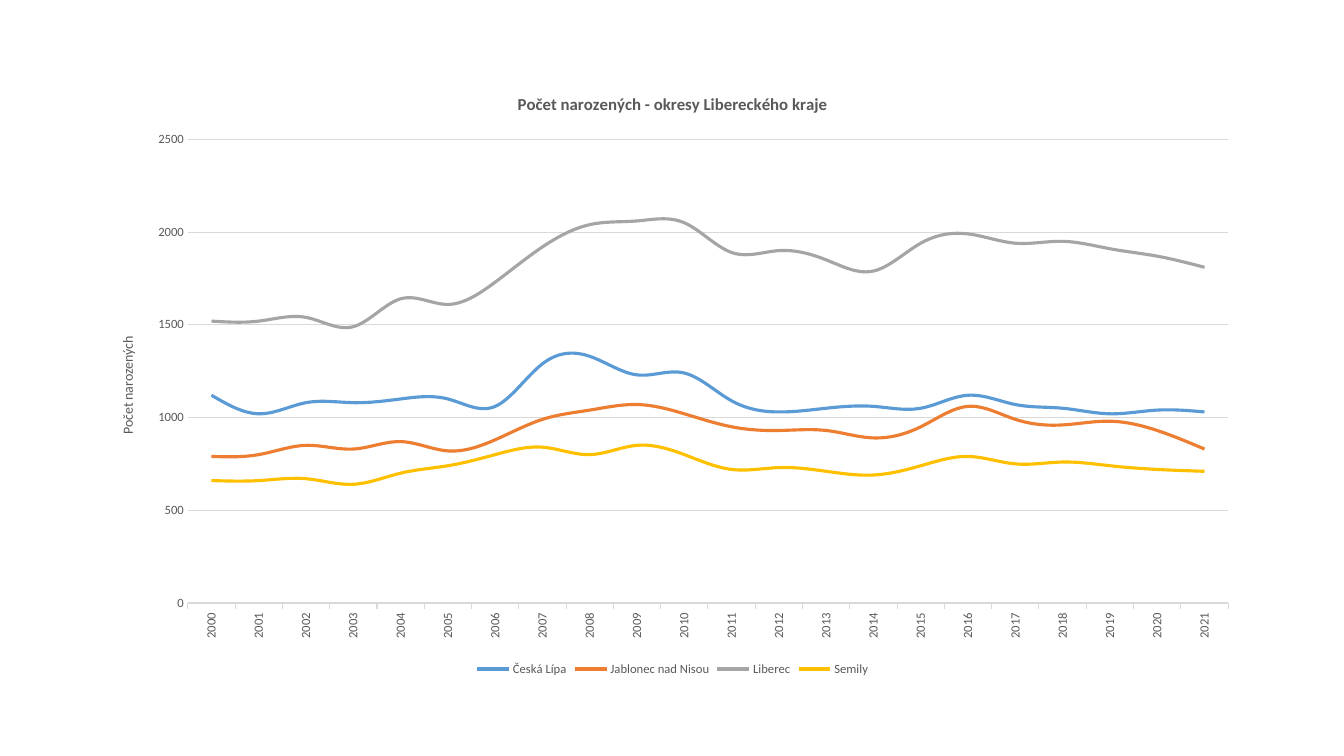
from lxml import etree
from pptx import Presentation
from pptx import util as u
from pptx.chart.data import CategoryChartData
from pptx.dml.color import RGBColor
from pptx.enum import chart as ch
from pptx.oxml import ns

COLORS = {
    "text": "595959",
    "rule": "D9D9D9",
    "Česká Lípa": "5B9BD5",
    "Jablonec nad Nisou": "ED7D31",
    "Liberec": "A5A5A5",
    "Semily": "FFC000",
}

YEARS = [str(year) for year in range(2000, 2022)]

BIRTHS = {
    "Česká Lípa": [
        1120, 1020, 1080, 1080, 1100, 1100, 1060, 1290, 1330, 1230, 1240,
        1090, 1030, 1050, 1060, 1050, 1120, 1070, 1050, 1020, 1040, 1030],
    "Jablonec nad Nisou": [
        790, 800, 850, 830, 870, 820, 880, 990, 1040, 1070, 1020,
        950, 930, 930, 890, 950, 1060, 990, 960, 980, 930, 830],
    "Liberec": [
        1520, 1520, 1540, 1490, 1640, 1610, 1730, 1920, 2040, 2060, 2050,
        1890, 1900, 1850, 1790, 1940, 1990, 1940, 1950, 1910, 1870, 1810],
    "Semily": [
        660, 660, 670, 640, 700, 740, 800, 840, 800, 850, 800,
        720, 730, 710, 690, 740, 790, 750, 760, 740, 720, 710],
}


class ChartSlide:
    """Holds the style and the current slide, with lengths as shares of its size."""

    def __init__(self, deck, font="Calibri"):
        self.deck = deck
        self.font = font
        self.slide = deck.slides.add_slide(deck.slide_layouts[6])

    def style_font(self, font, size, bold=False):
        font.name = self.font
        font.size = u.Pt(size)
        font.bold = bold
        font.color.rgb = RGBColor.from_string(COLORS["text"])

    def style_line(self, line, color, width):
        line.color.rgb = RGBColor.from_string(COLORS[color])
        line.width = u.Pt(width)

    def title(self, owner, wording, size, bold=False):
        owner.text_frame.text = wording
        self.style_font(owner.text_frame.paragraphs[0].font, size, bold)

    def place(self, element, position, **shares):
        for old in element.findall(ns.qn("c:layout")):
            element.remove(old)
        layout = etree.Element(ns.qn("c:layout"))
        manual = etree.SubElement(layout, ns.qn("c:manualLayout"))
        for tag, value in shares.items():
            etree.SubElement(manual, ns.qn("c:" + tag)).set("val", str(value))
        element.insert(position, layout)

    def turn_upright(self, element):
        body = next(element.iter(ns.qn("a:bodyPr")))
        body.set("rot", "-5400000")
        body.set("vert", "horz")

    def line_chart(self, left, top, width, height, heading, categories, series):
        data = CategoryChartData()
        data.categories = categories
        for name, values in series.items():
            data.add_series(name, values)
        wide, high = self.deck.slide_width, self.deck.slide_height
        chart = self.slide.shapes.add_chart(
            ch.XL_CHART_TYPE.LINE, int(left * wide), int(top * high),
            int(width * wide), int(height * high), data).chart
        self.style_font(chart.font, 10)
        self.title(chart.chart_title, heading, 12, bold=True)
        chart.has_legend = True
        chart.legend.position = ch.XL_LEGEND_POSITION.BOTTOM
        chart.legend.include_in_layout = False
        self.style_font(chart.legend.font, 9)
        plot = chart.plots[0]
        plot.vary_by_categories = False
        for line in plot.series:
            line.smooth = True
            line.marker.style = ch.XL_MARKER_STYLE.NONE
            self.style_line(line.format.line, line.name, 2.25)
        return chart

    def category_axis(self, axis):
        axis.has_major_gridlines = False
        axis.major_tick_mark = ch.XL_TICK_MARK.OUTSIDE
        axis.minor_tick_mark = ch.XL_TICK_MARK.NONE
        self.style_font(axis.tick_labels.font, 9)
        self.style_line(axis.format.line, "rule", 0.75)
        self.turn_upright(axis._element)

    def value_axis(self, axis, wording, top, step):
        axis.minimum_scale = 0
        axis.maximum_scale = top
        axis.major_unit = step
        axis.major_tick_mark = ch.XL_TICK_MARK.NONE
        axis.minor_tick_mark = ch.XL_TICK_MARK.NONE
        axis.format.line.fill.background()
        axis.has_major_gridlines = True
        self.style_line(axis.major_gridlines.format.line, "rule", 0.75)
        self.style_font(axis.tick_labels.font, 9)
        self.title(axis.axis_title, wording, 10)
        label = axis.axis_title._element
        self.turn_upright(label)
        self.place(label, 1, xMode="edge", yMode="edge", x=0.02, y=0.43)


def main():
    deck = Presentation()
    deck.slide_width = u.Inches(13.33)
    deck.slide_height = u.Inches(7.5)
    page = ChartSlide(deck)
    chart = page.line_chart(0.069, 0.095, 0.863, 0.805,
                            "Počet narozených - okresy Libereckého kraje",
                            YEARS, BIRTHS)
    page.category_axis(chart.category_axis)
    page.value_axis(chart.value_axis, "Počet narozených", top=2500, step=500)
    plot_area = next(chart._chartSpace.iter(ns.qn("c:plotArea")))
    page.place(plot_area, 0, layoutTarget="inner", xMode="edge", yMode="edge",
               x=0.082, y=0.111, w=0.897, h=0.762)
    deck.save("out.pptx")


if __name__ == "__main__":
    main()
